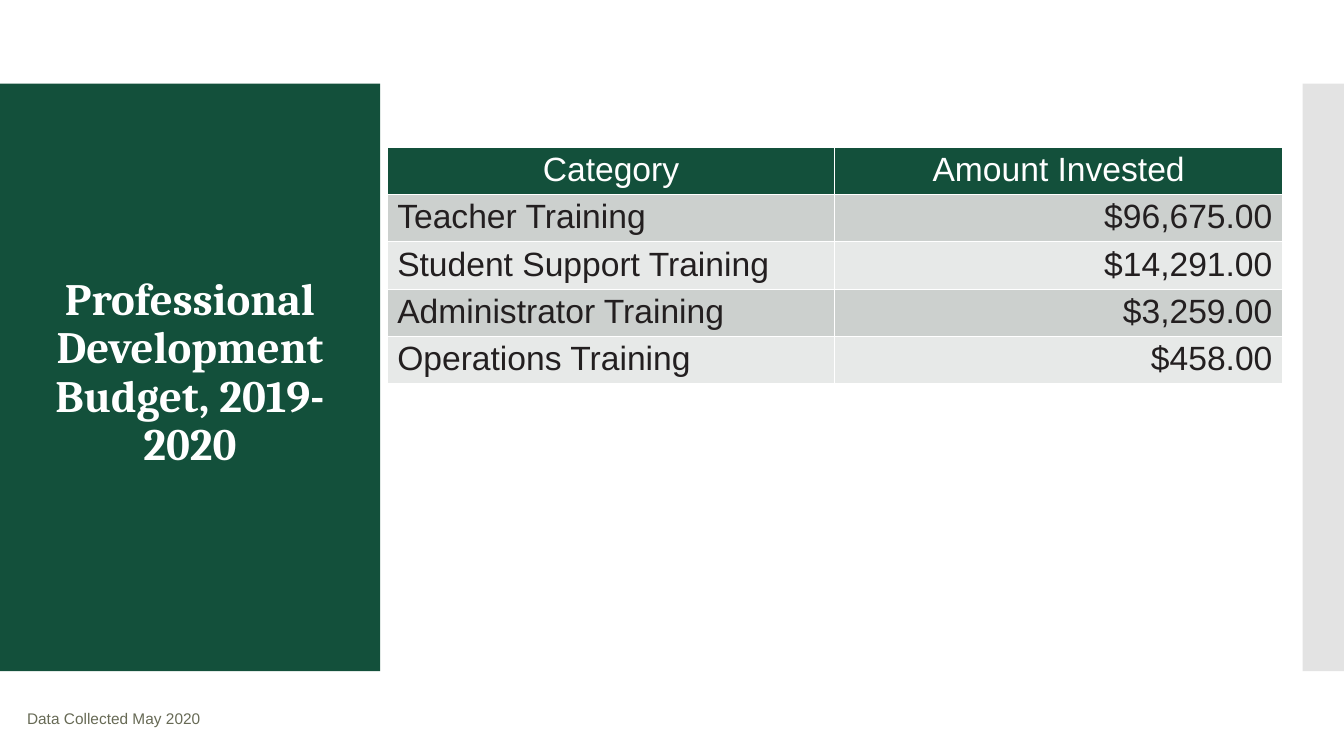
from pptx import Presentation
from pptx.dml.color import RGBColor
from pptx.enum.shapes import MSO_SHAPE
from pptx.enum.text import MSO_ANCHOR, MSO_AUTO_SIZE, PP_ALIGN
from pptx.oxml.ns import qn
from pptx.util import Inches, Pt
from lxml.etree import SubElement

GREEN, GREY, WHITE = "13503B", "C8C8C8", "FFFFFF"
BANDS = ("CCD0CE", "E7E9E8")
TITLE = {"name": "Cambria", "size": Pt(32), "bold": True}
NOTE = {"name": "Arial", "size": Pt(11)}
CELL = {"name": "Arial", "size": Pt(24), "bold": False}
FRAME = {"word_wrap": True, "auto_size": MSO_AUTO_SIZE.NONE,
         "vertical_anchor": MSO_ANCHOR.MIDDLE}
CELL_BOX = {"margin_left": Inches(0.1), "margin_right": Inches(0.1),
            "margin_top": Inches(0.04), "margin_bottom": Inches(0.04)}
BUDGET = [
    ("Category", "Amount Invested"),
    ("Teacher Training", "$96,675.00"),
    ("Student Support Training", "$14,291.00"),
    ("Administrator Training", "$3,259.00"),
    ("Operations Training", "$458.00"),
]


def rgb(value):
    """Return the colour for a hex string."""
    return RGBColor.from_string(value)


def apply(target, values):
    """Set each attribute in values on target."""
    for name, value in values.items():
        setattr(target, name, value)


def write(tf, text, font, color, align=PP_ALIGN.LEFT):
    """Write one formatted paragraph into a text frame."""
    p = tf.paragraphs[0]
    p.alignment = align
    r = p.add_run()
    r.text = text
    apply(r.font, font)
    r.font.color.rgb = rgb(color)
    return p


def add_panel(s, box, color, alpha=None):
    """Add a plain rectangle behind the title."""
    sp = s.shapes.add_shape(MSO_SHAPE.RECTANGLE, *map(Inches, box))
    sp.shadow.inherit = False
    sp.fill.solid()
    sp.fill.fore_color.rgb = rgb(color)
    sp.line.fill.background()
    if alpha:
        fill = sp.element.spPr.find(qn("a:solidFill"))
        SubElement(fill[0], qn("a:alpha"), val=str(alpha * 1000))
    s.shapes.title.element.addprevious(sp.element)


def add_title(s, box, text):
    """Place the title on a green panel that fills the box."""
    left, top, width, height = box
    add_panel(s, box, GREEN)
    sp = s.shapes.title
    apply(sp, {"left": Inches(left + 0.16), "top": Inches(top + 1.83),
               "width": Inches(width - 0.32), "height": Inches(2.09)})
    apply(sp.text_frame, FRAME)
    p = write(sp.text_frame, text, TITLE, WHITE, PP_ALIGN.CENTER)
    p.line_spacing = 0.9


def add_note(s, box, text):
    """Add the small data note."""
    tf = s.shapes.add_textbox(*map(Inches, box)).text_frame
    apply(tf, FRAME)
    write(tf, text, NOTE, "676A55")


def add_budget(s, box, rows):
    """Add the banded budget table."""
    table = s.shapes.add_table(len(rows), len(rows[0]), *map(Inches, box)).table
    for i, row in enumerate(rows):
        for j, text in enumerate(row):
            cell = table.cell(i, j)
            apply(cell, CELL_BOX)
            cell.fill.solid()
            cell.fill.fore_color.rgb = rgb(BANDS[(i - 1) % 2] if i else GREEN)
            align = (PP_ALIGN.LEFT, PP_ALIGN.RIGHT)[j] if i else PP_ALIGN.CENTER
            write(cell.text_frame, text, CELL, "231F20" if i else WHITE, align)


def main():
    """Build and save the budget slide."""
    prs = Presentation()
    prs.slide_width, prs.slide_height = Inches(13.33), Inches(7.5)
    s = prs.slides.add_slide(prs.slide_layouts[5])
    add_title(s, (0, 0.83, 3.77, 5.83), "Professional Development Budget, 2019-2020")
    add_panel(s, (12.92, 0.83, 0.41, 5.83), GREY, 50)
    add_note(s, (0.17, 6.92, 8.56, 0.41), "Data Collected May 2020")
    add_budget(s, (3.84, 1.46, 8.88, 2.35), BUDGET)
    prs.save("out.pptx")


if __name__ == "__main__":
    main()
